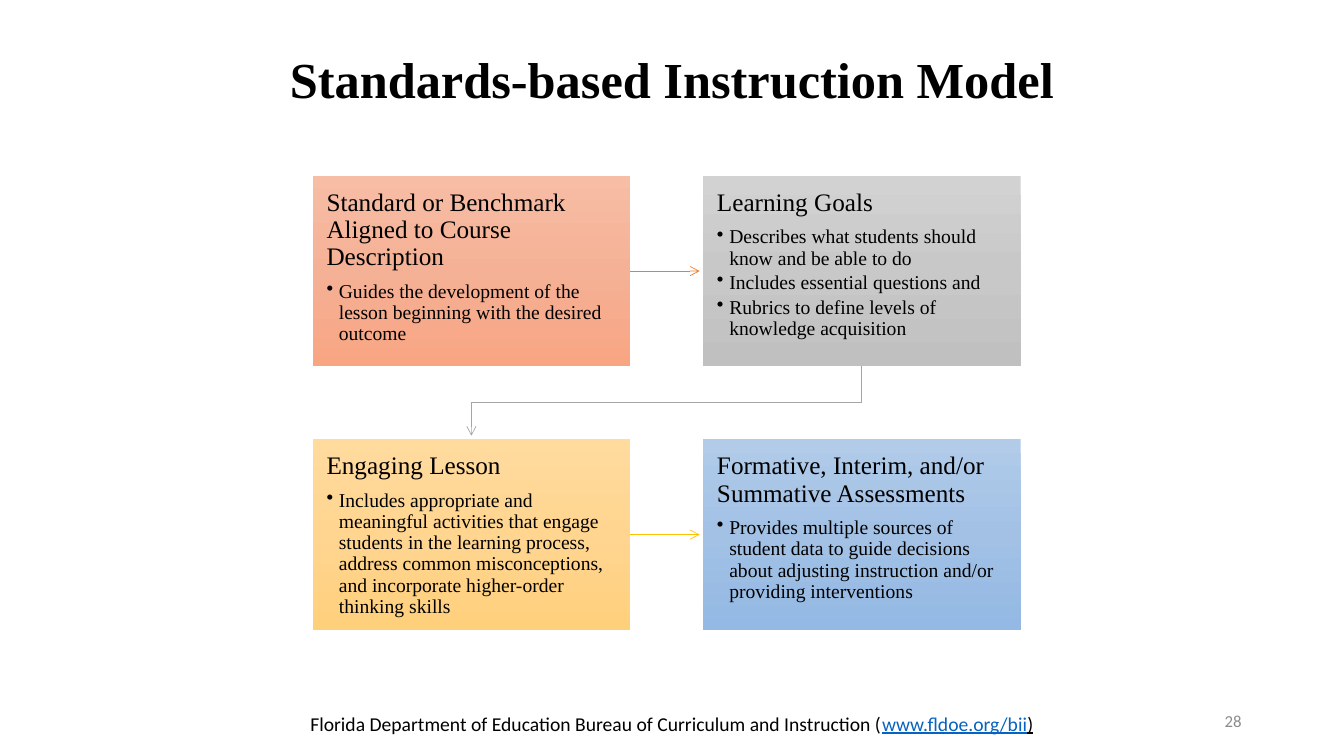
from copy import deepcopy
from dataclasses import dataclass

from lxml import etree
from pptx import Presentation
from pptx.dml.color import RGBColor
from pptx.enum.shapes import MSO_CONNECTOR, MSO_SHAPE
from pptx.enum.text import MSO_ANCHOR, PP_ALIGN
from pptx.oxml.ns import qn
from pptx.util import Cm, Pt

RECTANGLE = MSO_SHAPE.RECTANGLE
STRAIGHT = MSO_CONNECTOR.STRAIGHT
TOP, MIDDLE = MSO_ANCHOR.TOP, MSO_ANCHOR.MIDDLE
LEFT, CENTER, RIGHT = PP_ALIGN.LEFT, PP_ALIGN.CENTER, PP_ALIGN.RIGHT
RIGHT_SIDE = 3


@dataclass(frozen=True)
class Theme:
    """Colours, fonts and type sizes of the slide."""
    serif: str = "Times New Roman"
    sans: str = "Calibri"
    text: str = "000000"
    muted: str = "8C8C8C"
    address: str = "0563C1"
    title_size: int = 36
    heading_size: int = 18
    body_size: int = 14
    number_size: int = 12
    orange: str = "ED7D31"
    gray: str = "A5A5A5"
    gold: str = "FFC000"
    standard_fill: tuple = ("F7BDA5", "F5B196", "F8A582")
    goals_fill: tuple = ("D2D2D2", "C8C8C8", "C0C0C0")
    lesson_fill: tuple = ("FFDB9E", "FFD590", "FFD07C")
    assessment_fill: tuple = ("B1CBE9", "A3C1E5", "93B9E4")


THEME = Theme()
GRID_LEFT, GRID_TOP = Cm(7.88), Cm(4.43)
CARD_WIDTH, CARD_HEIGHT = Cm(8), Cm(4.8)
COLUMN_STEP, ROW_STEP = Cm(9.84), Cm(6.64)
CARD_INSET, BULLET_INDENT = Cm(0.35), Cm(0.31)
ARROW_LENGTH = Cm(1.75)

CARDS = [
    ("Standard or Benchmark Aligned to Course Description",
     ["Guides the development of the lesson beginning with the desired outcome"],
     THEME.standard_fill),
    ("Learning Goals",
     ["Describes what students should know and be able to do",
      "Includes essential questions and",
      "Rubrics to define levels of knowledge acquisition"],
     THEME.goals_fill),
    ("Engaging Lesson",
     ["Includes appropriate and meaningful activities that engage students in the "
      "learning process, address common misconceptions, and incorporate "
      "higher-order thinking skills"],
     THEME.lesson_fill),
    ("Formative, Interim, and/or Summative Assessments",
     ["Provides multiple sources of student data to guide decisions about adjusting "
      "instruction and/or providing interventions"],
     THEME.assessment_fill),
]


def write_text(paragraph, text, *, size, font=THEME.serif, color=THEME.text,
               bold=False, underline=False):
    """Append a formatted run to a paragraph."""
    run = paragraph.add_run()
    run.text = text
    run.font.name = font
    run.font.size = Pt(size)
    run.font.bold = bold
    run.font.underline = underline
    run.font.color.rgb = RGBColor.from_string(color)


def add_text_box(slide, left, top, width, height, alignment, anchor=MIDDLE):
    """Add a wrapping text box and return its first paragraph."""
    frame = slide.shapes.add_textbox(left, top, width, height).text_frame
    frame.word_wrap = True
    frame.vertical_anchor = anchor
    paragraph = frame.paragraphs[0]
    paragraph.alignment = alignment
    return paragraph


def space_paragraph(paragraph, space_after):
    """Set left alignment and the line spacing used in cards."""
    paragraph.alignment = LEFT
    paragraph.line_spacing = 0.9
    paragraph.space_after = Pt(space_after)


def add_bullet(frame, text):
    """Add a bulleted paragraph with a hanging indent."""
    paragraph = frame.add_paragraph()
    space_paragraph(paragraph, 2.4)
    properties = paragraph._p.get_or_add_pPr()
    properties.set("marL", str(BULLET_INDENT))
    properties.set("indent", str(-BULLET_INDENT))
    etree.SubElement(properties, qn("a:buChar")).set("char", "•")
    write_text(paragraph, text, size=THEME.body_size)


def fill_gradient(shape, colors):
    """Fill a shape from top to bottom with three evenly spaced colours."""
    shape.fill.gradient()
    shape.fill.gradient_angle = 270
    stop_list = shape._element.spPr.find(".//" + qn("a:gsLst"))
    stop_list.insert(1, deepcopy(stop_list[0]))
    for index, (stop, color) in enumerate(zip(shape.fill.gradient_stops, colors)):
        stop.position = index / 2
        stop.color.rgb = RGBColor.from_string(color)


def add_card(slide, left, top, heading, bullets, colors):
    """Add a gradient card with a heading and bullets."""
    card = slide.shapes.add_shape(RECTANGLE, left, top, CARD_WIDTH, CARD_HEIGHT)
    card.shadow.inherit = False
    card.line.fill.background()
    fill_gradient(card, colors)
    frame = card.text_frame
    frame.word_wrap = True
    frame.vertical_anchor = TOP
    frame.margin_left = frame.margin_right = CARD_INSET
    frame.margin_top = frame.margin_bottom = CARD_INSET
    space_paragraph(frame.paragraphs[0], 7.2)
    write_text(frame.paragraphs[0], heading, size=THEME.heading_size)
    for bullet in bullets:
        add_bullet(frame, bullet)
    return card


def style_arrow(arrow, color):
    """Give a line its colour, width and open arrowhead, without a shadow."""
    arrow.line.color.rgb = RGBColor.from_string(color)
    arrow.line.width = Pt(0.5)
    properties = arrow._element.spPr
    etree.SubElement(properties.find(qn("a:ln")), qn("a:tailEnd")).set("type", "arrow")
    etree.SubElement(properties, qn("a:effectLst"))


def add_row_arrow(slide, card, color):
    """Add an arrow that leaves the right side of a card."""
    start = card.left + card.width
    middle = card.top + card.height // 2
    arrow = slide.shapes.add_connector(
        STRAIGHT, start, middle, start + ARROW_LENGTH, middle)
    arrow.begin_connect(card, RIGHT_SIDE)
    style_arrow(arrow, color)


def add_return_arrow(slide, source, target, color):
    """Add a bent arrow from the bottom of one card to the top of another."""
    start_x = source.left + source.width // 2
    end_x = target.left + target.width // 2
    start_y = source.top + source.height
    bend_y = (start_y + target.top) // 2
    builder = slide.shapes.build_freeform(start_x, start_y)
    builder.add_line_segments(
        [(start_x, bend_y), (end_x, bend_y), (end_x, start_y + ARROW_LENGTH)],
        close=False)
    arrow = builder.convert_to_shape()
    arrow.fill.background()
    style_arrow(arrow, color)


def add_footer(slide):
    """Add the department line and the slide number."""
    number = add_text_box(slide, Cm(23.92), Cm(17.65), Cm(7.62), Cm(1.01), RIGHT)
    write_text(number, "28", size=THEME.number_size, font=THEME.sans, color=THEME.muted)
    credit = add_text_box(slide, Cm(4.23), Cm(17.81), Cm(25.4), Cm(0.86), CENTER, TOP)
    for text, color, underline in [
        ("Florida Department of Education Bureau of Curriculum and Instruction (",
         THEME.text, False),
        ("www.fldoe.org/bii", THEME.address, True),
        (")", THEME.text, True),
    ]:
        write_text(credit, text, size=THEME.body_size, font=THEME.sans,
                   color=color, underline=underline)


def main():
    """Build the slide and save it."""
    presentation = Presentation()
    presentation.slide_width, presentation.slide_height = Cm(33.87), Cm(19.05)
    slide = presentation.slides.add_slide(presentation.slide_layouts[6])
    title = add_text_box(slide, Cm(2.33), Cm(0.23), Cm(29.21), Cm(3.68), CENTER)
    title.line_spacing = 0.9
    write_text(title, "Standards-based Instruction Model",
               size=THEME.title_size, bold=True)
    add_footer(slide)
    cards = []
    for index, content in enumerate(CARDS):
        row, column = divmod(index, 2)
        cards.append(add_card(slide, GRID_LEFT + column * COLUMN_STEP,
                              GRID_TOP + row * ROW_STEP, *content))
    standard, goals, lesson, _ = cards
    add_row_arrow(slide, standard, THEME.orange)
    add_return_arrow(slide, goals, lesson, THEME.gray)
    add_row_arrow(slide, lesson, THEME.gold)
    presentation.save("out.pptx")


if __name__ == "__main__":
    main()
